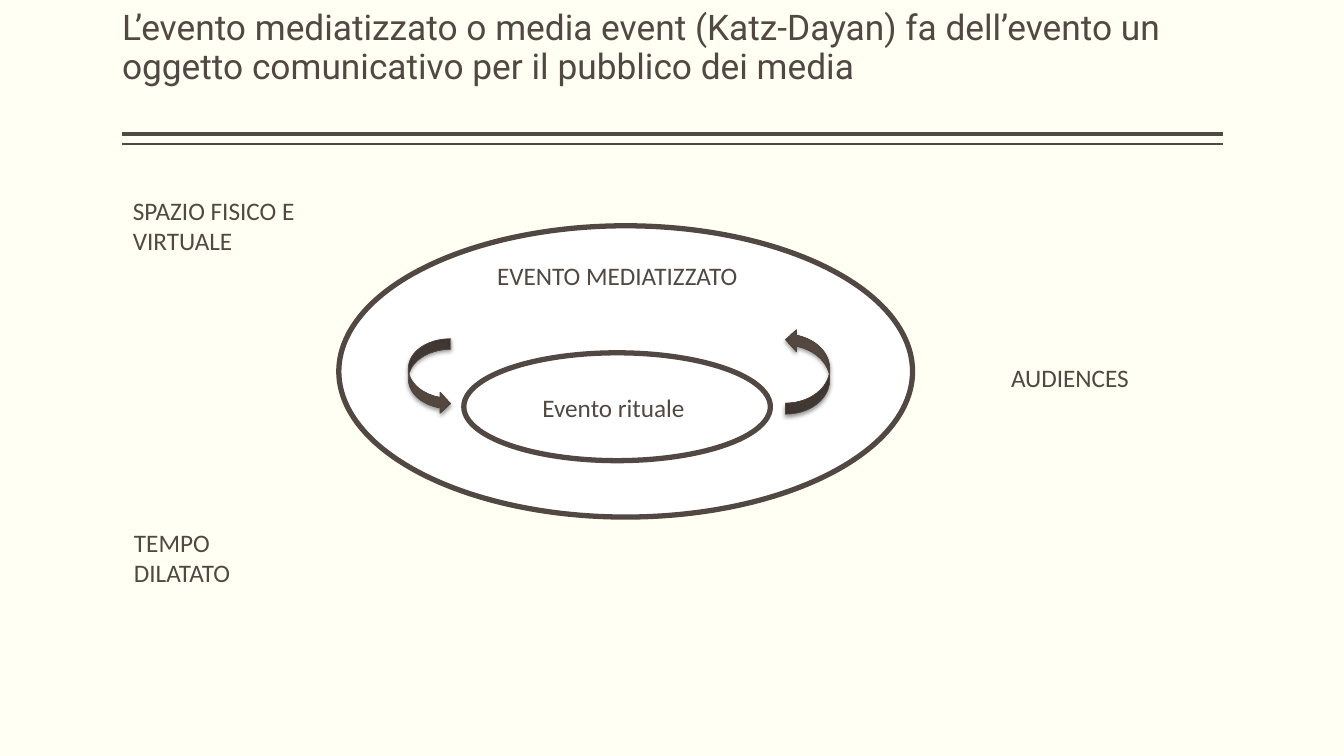
from pptx import Presentation
from pptx.dml.color import RGBColor
from pptx.enum.shapes import MSO_CONNECTOR, MSO_SHAPE
from pptx.enum.text import MSO_ANCHOR, MSO_AUTO_SIZE, PP_ALIGN
from pptx.oxml import parse_xml
from pptx.oxml.ns import nsdecls
from pptx.util import Inches, Pt

INK, PAPER, WHITE, EDGE = "514843", "FFFFF3", "FFFFFF", "504641"
STOPS = [(0, "544740"), (71, "534740"), (100, "4A3F39")]


def tint(code):
    return RGBColor.from_string(code)


class Board:
    """Holds the style and the slide; lengths are percent of its size."""

    def __init__(self, deck):
        self.deck = deck
        self.slide = deck.slides.add_slide(deck.slide_layouts[5])
        self.shapes = self.slide.shapes
        fill = self.slide.background.fill
        fill.solid()
        fill.fore_color.rgb = tint(PAPER)

    def across(self, share):
        return round(self.deck.slide_width * share / 100)

    def down(self, share):
        return round(self.deck.slide_height * share / 100)

    def box(self, x, y, w, h):
        return self.across(x), self.down(y), self.across(w), self.down(h)

    def style(self, frame, words, font, size, align):
        frame.word_wrap = True
        frame.text = words
        para = frame.paragraphs[0]
        para.alignment = align
        para.font.name, para.font.size = font, Pt(size)
        para.font.color.rgb = tint(INK)
        return para

    def title(self, words, *area):
        head = self.shapes.title
        head.left, head.top, head.width, head.height = self.box(*area)
        frame = head.text_frame
        para = self.style(frame, words, "Roboto", 25.2, PP_ALIGN.LEFT)
        para.line_spacing = 0.9
        frame.auto_size = MSO_AUTO_SIZE.NONE
        frame.vertical_anchor = MSO_ANCHOR.BOTTOM
        frame.margin_left = frame.margin_right = 0
        frame.margin_top, frame.margin_bottom = Inches(0.05), Inches(0.42)

    def label(self, words, *area, align=PP_ALIGN.LEFT):
        frame = self.shapes.add_textbox(*self.box(*area)).text_frame
        self.style(frame, words, "Calibri", 18, align)

    def rule(self, y, width):
        line = self.shapes.add_connector(
            MSO_CONNECTOR.STRAIGHT, self.across(9.08), self.down(y),
            self.across(90.98), self.down(y))
        line.line.color.rgb = tint(INK)
        line.line.width = Pt(width)
        line._element.spPr.append(parse_xml(f"<a:effectLst {nsdecls('a')}/>"))

    def shape(self, kind, area, edge, width):
        item = self.shapes.add_shape(kind, *self.box(*area))
        item.shadow.inherit = False
        item.line.color.rgb = tint(edge)
        item.line.width = Pt(width)
        return item

    def oval(self, *area):
        item = self.shape(MSO_SHAPE.OVAL, area, INK, 3.78)
        item.fill.solid()
        item.fill.fore_color.rgb = tint(WHITE)

    def arrow(self, kind, *area, flip=False):
        props = self.shape(kind, area, EDGE, 0.5)._element.spPr
        if flip:
            props.xfrm.set("flipV", "1")
        # Gradient from the edges to the centre
        stops = "".join(f'<a:gs pos="{at * 1000}"><a:srgbClr val="{code}"/></a:gs>'
                        for at, code in STOPS)
        props.insert(2, parse_xml(
            f'<a:gradFill {nsdecls("a")}><a:gsLst>{stops}</a:gsLst>'
            '<a:path path="rect"><a:fillToRect l="50000" t="50000" r="50000" '
            'b="50000"/></a:path></a:gradFill>'))
        # Soft shadow straight below
        props[-1].append(parse_xml(
            f'<a:outerShdw {nsdecls("a")} blurRad="{Pt(3.1)}" dist="{Pt(2)}" '
            'dir="5400000" rotWithShape="0"><a:srgbClr val="000000">'
            '<a:alpha val="38000"/></a:srgbClr></a:outerShdw>'))


def main():
    deck = Presentation()
    deck.slide_width, deck.slide_height = Inches(13.33), Inches(7.5)
    board = Board(deck)

    # Heading and double rule
    board.title("L’evento mediatizzato o media event (Katz-Dayan) fa dell’evento un "
                "oggetto comunicativo per il pubblico dei media", 9.08, 1.07, 81.92, 16)
    board.rule(17.73, 3)
    board.rule(19.07, 1)

    # Media event around the ritual event
    board.oval(25.21, 29.87, 42.69, 38.53)
    board.label("EVENTO MEDIATIZZATO", 36.16, 33.73, 19.53, 9.47, align=PP_ALIGN.CENTER)
    board.oval(34.51, 46.67, 22.81, 14.27)
    board.label("Evento rituale", 38.93, 51.2, 13.43, 5.33, align=PP_ALIGN.CENTER)

    # Context labels
    board.label("SPAZIO FISICO E VIRTUALE", 9.15, 25.2, 13.58, 13.47)
    board.label("TEMPO DILATATO", 9.23, 69.07, 13.58, 9.47)
    board.label("AUDIENCES", 74.49, 47.33, 18.08, 5.33)

    # Circular exchange
    board.arrow(MSO_SHAPE.CURVED_RIGHT_ARROW, 30.38, 44.8, 3.15, 10)
    board.arrow(MSO_SHAPE.CURVED_LEFT_ARROW, 58.44, 43.47, 3.3, 11.33, flip=True)

    deck.save("out.pptx")


if __name__ == "__main__":
    main()
